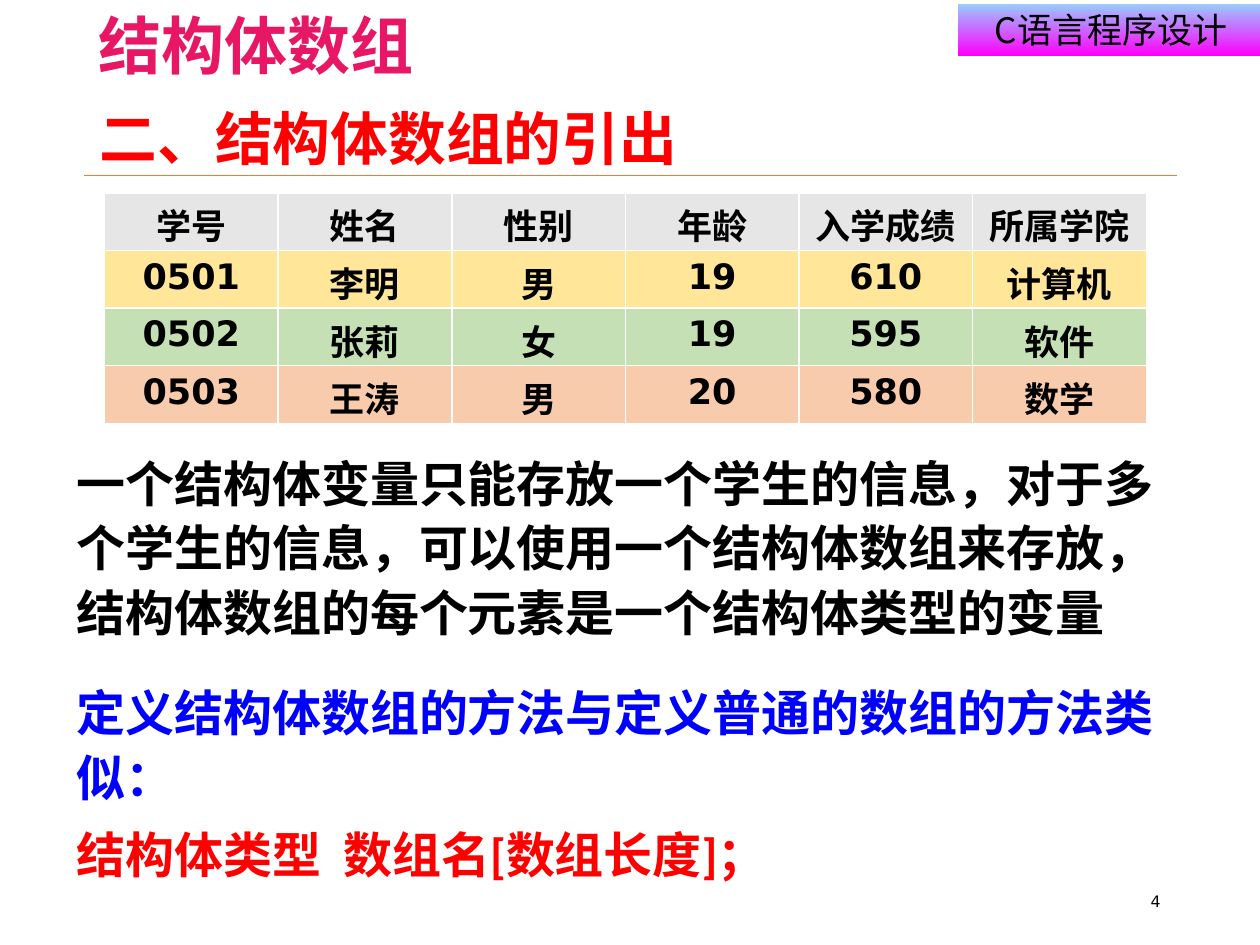
import dataclasses

import lxml.etree
import pptx
import pptx.dml.color
import pptx.enum.shapes
import pptx.enum.text
import pptx.oxml.ns
import pptx.util

Inches = pptx.util.Inches
RGB = pptx.dml.color.RGBColor.from_string
ALIGN = pptx.enum.text.PP_ALIGN
ANCHOR = pptx.enum.text.MSO_ANCHOR
qn = pptx.oxml.ns.qn


@dataclasses.dataclass(frozen=True)
class Theme:
    body: str = "Calibri"
    plain: str = "DejaVu Sans"
    east: str = "Noto Sans CJK SC"
    head: str = "Noto Sans CJK JP"
    black: str = "000000"
    red: str = "FF0000"
    blue: str = "0000FF"
    pink: str = "E81766"
    sky: str = "99CCFF"
    magenta: str = "FF00FF"
    rule: str = "ED7D31"
    rows: tuple = ("E7E6E6", "FFE699", "C5E0B4", "F8CBAD")
    top: int = 36
    title: int = 33
    text: int = 28
    cell: int = 20
    number: int = 9


theme = Theme()


def write(frame, *lines, size, font, east=None, color=theme.black, bold=False,
          align=ALIGN.LEFT, anchor=ANCHOR.TOP, spacing=None, gap=0):
    """Fill a text frame; each line is a text or a (text, color) pair."""
    frame.word_wrap = True
    frame.vertical_anchor = anchor
    for i, line in enumerate(lines):
        text, tint = line if isinstance(line, tuple) else (line, color)
        para = frame.add_paragraph() if i else frame.paragraphs[0]
        para.alignment = align
        if spacing:
            para.line_spacing = spacing
        if i:
            para.space_before = pptx.util.Pt(gap)
        run = para.add_run()
        run.text = text
        run.font.size = pptx.util.Pt(size)
        run.font.bold = bold
        run.font.name = font
        run.font.color.rgb = RGB(tint)
        # East Asian typeface follows the Latin one
        latin = run._r.get_or_add_rPr().find(qn("a:latin"))
        ea = lxml.etree.Element(qn("a:ea"), typeface=east or font)
        latin.addnext(ea)


deck = pptx.Presentation()
deck.slide_width = Inches(10)
deck.slide_height = Inches(7.5)
slide = deck.slides.add_slide(deck.slide_layouts[5])
shapes = slide.shapes

# Course banner
banner = shapes.add_shape(pptx.enum.shapes.MSO_SHAPE.RECTANGLE,
                          Inches(7.6), Inches(0.03), Inches(2.44), Inches(0.41))
banner.shadow.inherit = False
banner.line.fill.background()
banner.fill.gradient()
banner.fill.gradient_angle = 270
for stop, tint in zip(banner.fill.gradient_stops, (theme.sky, theme.magenta)):
    stop.color.rgb = RGB(tint)
write(banner.text_frame, "C语言程序设计", size=theme.cell, font=theme.east,
      align=ALIGN.CENTER, anchor=ANCHOR.MIDDLE)

# Chapter heading
head = shapes.add_textbox(Inches(0.2), Inches(0), Inches(3.66), Inches(0.41))
write(head.text_frame, "结构体数组", size=theme.top, font=theme.head,
      color=theme.pink, bold=True, align=ALIGN.CENTER)

# Rule under the title
rule = shapes.add_connector(pptx.enum.shapes.MSO_CONNECTOR.STRAIGHT,
                            Inches(0.67), Inches(1.39), Inches(9.34), Inches(1.39))
rule.line.color.rgb = RGB(theme.rule)
rule.line.width = pptx.util.Pt(0.25)
lxml.etree.SubElement(rule._element.spPr, qn("a:effectLst"))

# Title
title = shapes.title
title.left, title.top = Inches(0.69), Inches(0.4)
title.width, title.height = Inches(8.62), Inches(1.45)
write(title.text_frame, "二、结构体数组的引出", size=theme.title, font=theme.body,
      color=theme.red, bold=True, anchor=ANCHOR.MIDDLE, spacing=0.9)

# Explanation and definition
note = shapes.add_textbox(Inches(0.51), Inches(3.5), Inches(9.06), Inches(1.97))
write(note.text_frame,
      "一个结构体变量只能存放一个学生的信息，对于多个学生的信息，"
      "可以使用一个结构体数组来存放，结构体数组的每个元素是一个结构体类型的变量",
      size=theme.text, font=theme.body, bold=True, spacing=1.1)
usage = shapes.add_textbox(Inches(0.51), Inches(5.32), Inches(8.9), Inches(1.97))
write(usage.text_frame,
      ("定义结构体数组的方法与定义普通的数组的方法类似：", theme.blue),
      ("结构体类型  数组名[数组长度]；", theme.red),
      size=theme.text, font=theme.body, bold=True, spacing=1.1, gap=7.5)

# Page number
page = shapes.add_textbox(Inches(7.06), Inches(6.95), Inches(2.25), Inches(0.4))
write(page.text_frame, "4", size=theme.number, font=theme.plain,
      align=ALIGN.RIGHT, anchor=ANCHOR.MIDDLE)

# Student table; the default table style draws the white borders
data = (
    ("学号", "姓名", "性别", "年龄", "入学成绩", "所属学院"),
    ("0501", "李明", "男", "19", "610", "计算机"),
    ("0502", "张莉", "女", "19", "595", "软件"),
    ("0503", "王涛", "男", "20", "580", "数学"),
)
table = shapes.add_table(len(data), len(data[0]), Inches(0.83), Inches(1.53),
                         Inches(8.27), Inches(1.83)).table
for r, (row, tint) in enumerate(zip(data, theme.rows)):
    for c, text in enumerate(row):
        cell = table.cell(r, c)
        cell.fill.solid()
        cell.fill.fore_color.rgb = RGB(tint)
        write(cell.text_frame, text, size=theme.cell, font=theme.plain,
              east=theme.east, bold=True, align=ALIGN.CENTER)

deck.save("out.pptx")
